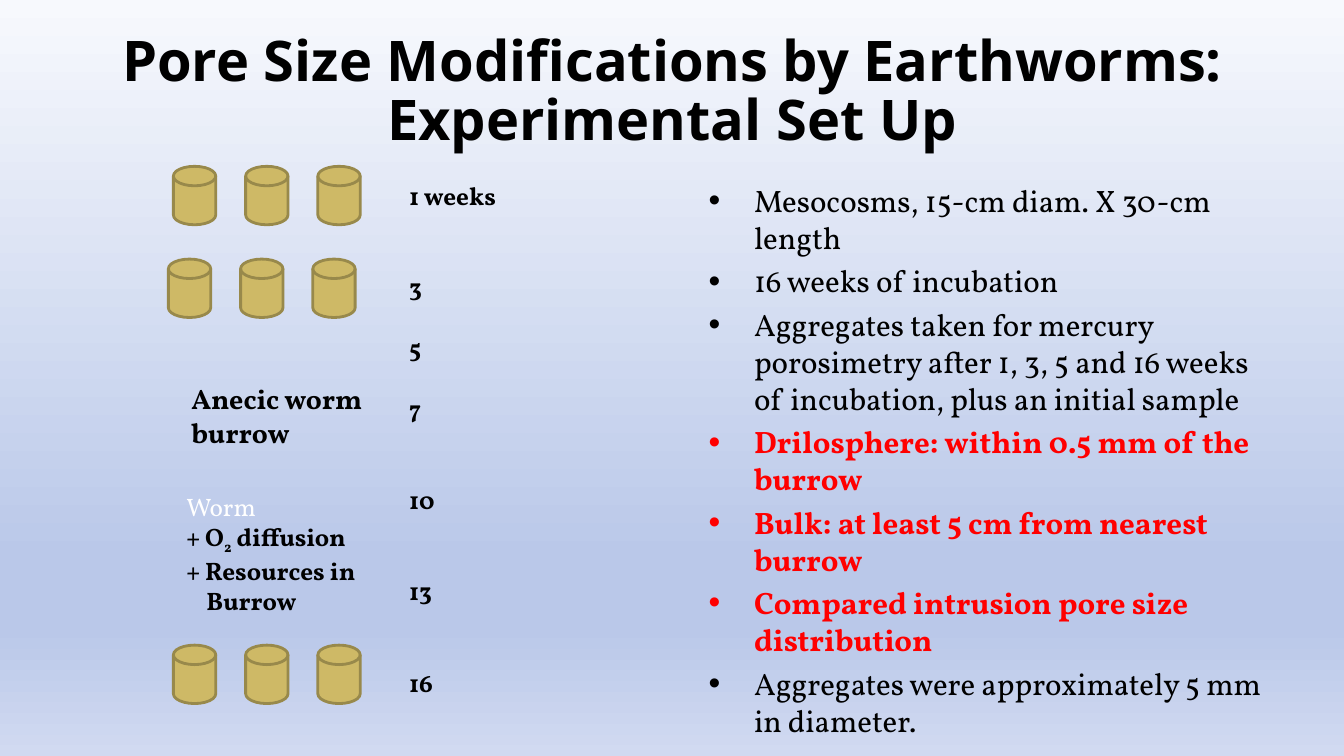
import pptx
import pptx.util
import pptx.dml.color
import pptx.enum.shapes
import pptx.enum.text
import pptx.oxml.ns
from dataclasses import dataclass
from lxml import etree

Pt, Inches = pptx.util.Pt, pptx.util.Inches
qn = pptx.oxml.ns.qn
RGB = pptx.dml.color.RGBColor.from_string


@dataclass(frozen=True)
class Theme:
    head_font: str = "Noto Sans"
    body_font: str = "Vollkorn"
    ink: str = "000000"
    accent: str = "FF0000"
    light: str = "FFFFFF"
    disk: str = "CEB966"
    disk_edge: str = "98894B"
    sky: tuple = ((0, "F7F9FD"), (74, "BAC8E9"), (83, "BAC8E9"), (100, "D1DAF1"))
    title: float = 40
    list: float = 22.1
    label: float = 20
    small: float = 18
    small_line: float = 21.8


def add_text(p, text, font, size, color, bold=False, baseline=0):
    r = p.add_run()
    r.text = text
    f = r.font
    f.name, f.size, f.bold = font, Pt(size), bold
    f.color.rgb = RGB(color)
    if baseline:
        r._r.get_or_add_rPr().set("baseline", str(baseline * 1000))
    return r


class Deck:
    COLS, ROWS = 40, 30

    def __init__(self, theme):
        self.t = theme
        self.prs = pptx.Presentation()
        self.prs.slide_width, self.prs.slide_height = Inches(13.33), Inches(7.5)
        self.s = self.prs.slides.add_slide(self.prs.slide_layouts[1])

    def box(self, x, y, w, h):
        """Grid columns and rows to slide lengths."""
        cw, rh = self.prs.slide_width / self.COLS, self.prs.slide_height / self.ROWS
        return [int(v) for v in (x * cw, y * rh, w * cw, h * rh)]

    def background(self):
        fill = self.s.background.fill
        fill.gradient()
        fill.gradient_angle = 270
        stops = self.s.element.xpath(".//a:gsLst")[0]
        for gs in list(stops):
            stops.remove(gs)
        for pos, color in self.t.sky:
            gs = etree.SubElement(stops, qn("a:gs"), pos=str(pos * 1000))
            etree.SubElement(gs, qn("a:srgbClr"), val=color)

    def placeholder(self, sp, at):
        sp.left, sp.top, sp.width, sp.height = self.box(*at)
        sp.text_frame.auto_size = pptx.enum.text.MSO_AUTO_SIZE.NONE
        return sp.text_frame

    def title(self, text, at):
        tf = self.placeholder(self.s.shapes.title, at)
        tf.vertical_anchor = pptx.enum.text.MSO_ANCHOR.MIDDLE
        p = tf.paragraphs[0]
        p.alignment = pptx.enum.text.PP_ALIGN.CENTER
        p.line_spacing = 0.88
        add_text(p, text, self.t.head_font, self.t.title, self.t.ink, bold=True)

    def bullets(self, items, at):
        tf = self.placeholder(self.s.placeholders[1], at)
        for i, (text, strong) in enumerate(items):
            p = tf.paragraphs[0] if i == 0 else tf.add_paragraph()
            p.space_before = Pt(0.2 * self.t.list)
            pPr = p._p.get_or_add_pPr()
            pPr.set("marL", str(Inches(0.6)))
            pPr.set("indent", str(Inches(-0.45)))
            etree.SubElement(pPr, qn("a:buSzPct"), val="108000")
            etree.SubElement(pPr, qn("a:buChar"), char="•")
            add_text(p, text, self.t.body_font, self.t.list,
                     self.t.accent if strong else self.t.ink, bold=strong)

    def disk(self, shapes, at):
        kind = pptx.enum.shapes.MSO_SHAPE.FLOWCHART_MAGNETIC_DISK
        sp = shapes.add_shape(kind, *self.box(*at))
        sp.shadow.inherit = False
        sp.fill.solid()
        sp.fill.fore_color.rgb = RGB(self.t.disk)
        sp.line.color.rgb = RGB(self.t.disk_edge)
        sp.line.width = Pt(2)

    def label(self, shapes, lines, at, size, wrap=False):
        """Each line is (runs, options); a run is (text, format)."""
        tf = shapes.add_textbox(*self.box(*at)).text_frame
        tf.word_wrap = wrap
        for i, (runs, opts) in enumerate(lines):
            p = tf.paragraphs[0] if i == 0 else tf.add_paragraph()
            if "before" in opts:
                p.space_before = Pt(opts["before"])
            if "indent" in opts:
                p._p.get_or_add_pPr().set("marL", str(Inches(opts["indent"])))
            for text, fmt in runs:
                add_text(p, text, **{"font": self.t.body_font, "size": size,
                                     "color": self.t.ink, "bold": True, **fmt})


def main():
    t = Theme()
    d = Deck(t)
    d.background()

    # Title and list
    d.title("Pore Size Modifications by Earthworms: Experimental Set Up", (2, 1.2, 36, 5))
    d.bullets([
        ("Mesocosms, 15-cm diam. X 30-cm length", False),
        ("16 weeks of incubation", False),
        ("Aggregates taken for mercury porosimetry after 1, 3, 5 and 16 weeks "
         "of incubation, plus an initial sample", False),
        ("Drilosphere: within 0.5 mm of the burrow", True),
        ("Bulk: at least 5 cm from nearest burrow", True),
        ("Compared intrusion pore size distribution", True),
        ("Aggregates were approximately 5 mm in diameter.", False),
    ], (20.34, 7, 17.67, 19.8))

    # Mesocosms, three per sampled week
    group = d.s.shapes.add_group_shape().shapes
    for x, y in ((5.16, 6.6), (5.01, 10.28), (5.16, 25.6)):
        for i in range(3):
            d.disk(group, (x + 2.15 * i, y, 1.26, 2.32))

    # Burrow and worm labels
    d.label(group, [([("Anecic worm", {})], {}), ([("burrow", {})], {})],
            (5.4, 14.96, 5.88, 3.08), t.label)
    d.label(group, [
        ([("Worm", {"color": t.light, "bold": False})], {}),
        ([("+ O", {}), ("2", {"baseline": -25}), (" diffusion", {})], {}),
        ([("+ Resources in", {})], {}),
        ([("Burrow", {})], {"indent": 0.2}),
    ], (5.25, 19.28, 5.85, 6.04), t.small)

    # Week scale: lines skipped above each week
    weeks = (("1 weeks", 0), ("3", 2), ("5", 1), ("7", 1), ("10", 2), ("13", 2), ("16", 2))
    d.label(d.s.shapes, [([(week, {})], {"before": skip * t.small_line})
                         for week, skip in weeks],
            (11.88, 6.96, 3.51, 21), t.small, wrap=True)

    d.prs.save("out.pptx")


if __name__ == "__main__":
    main()
